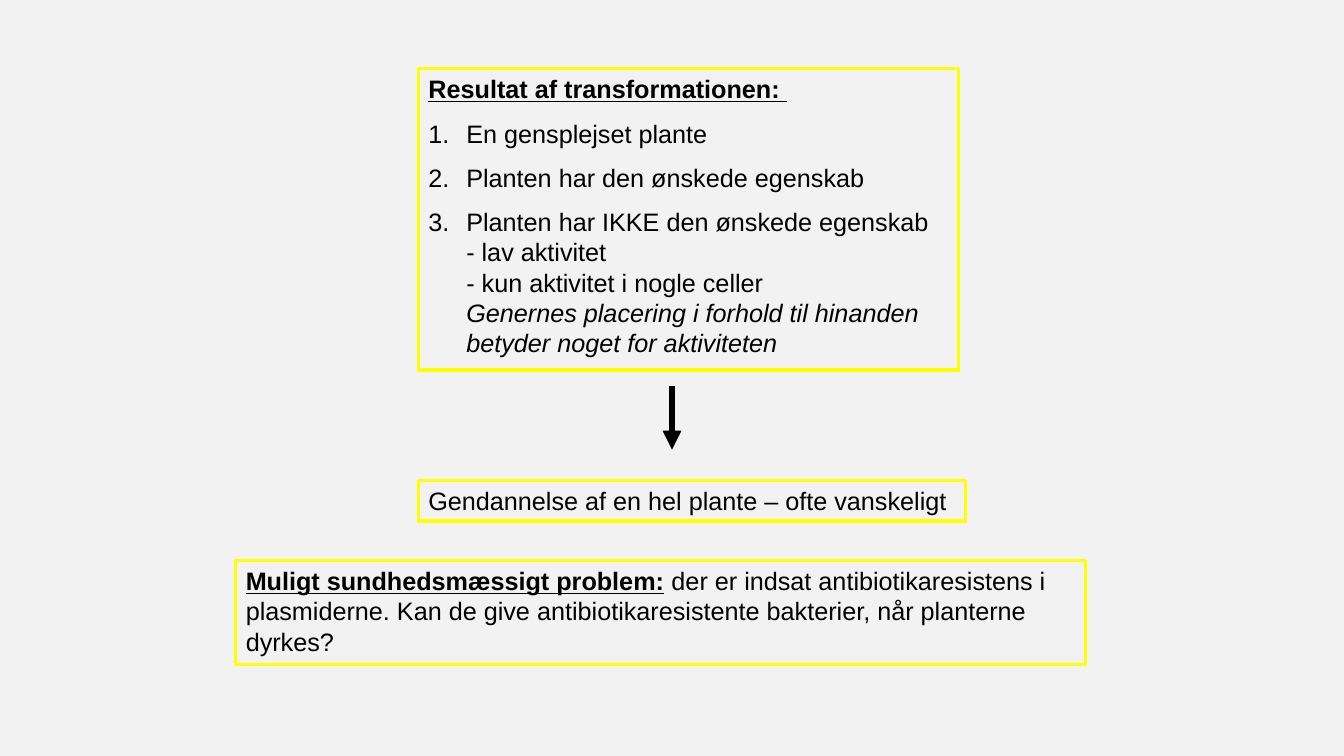
from dataclasses import dataclass

from lxml.etree import SubElement
from pptx import Presentation
from pptx.dml.color import RGBColor
from pptx.enum.shapes import MSO_CONNECTOR as Connector, MSO_SHAPE as Preset
from pptx.enum.text import MSO_ANCHOR as Anchor, MSO_AUTO_SIZE as AutoSize, PP_ALIGN as Align
from pptx.oxml.ns import qn
from pptx.util import Inches, Pt


@dataclass(frozen=True)
class Theme:
    background: RGBColor = RGBColor(0xF2, 0xF2, 0xF2)
    frame: RGBColor = RGBColor(0xFF, 0xFF, 0x00)
    ink: RGBColor = RGBColor(0x00, 0x00, 0x00)
    font: str = "Arial"
    text_size: Pt = Pt(18)
    paragraph_gap: Pt = Pt(10)
    list_indent: Pt = Pt(27)
    frame_width: Pt = Pt(2.25)
    arrow_width: Pt = Pt(4.5)


# Run styles
PLAIN = {}
HEADING = {"bold": True, "underline": True}
UNDERLINED = {"underline": True}
ITALIC = {"italic": True}


class SlideBuilder:
    """Holds the theme and current slide; lengths are percent of the slide's size."""

    def __init__(self, presentation, theme):
        self.presentation = presentation
        self.theme = theme
        self.slide = presentation.slides.add_slide(presentation.slide_layouts[1])
        title = self.slide.shapes.title
        title.element.getparent().remove(title.element)
        fill = self.slide.background.fill
        fill.solid()
        fill.fore_color.rgb = theme.background

    def x(self, share):
        return round(self.presentation.slide_width * share / 100)

    def y(self, share):
        return round(self.presentation.slide_height * share / 100)

    def frame(self, shape, left, top, width, height):
        shape.left, shape.top = self.x(left), self.y(top)
        shape.width, shape.height = self.x(width), self.y(height)
        shape.fill.background()
        shape.line.color.rgb = self.theme.frame
        shape.line.width = self.theme.frame_width
        text_frame = shape.text_frame
        text_frame.word_wrap = True
        text_frame.auto_size = AutoSize.NONE
        text_frame.vertical_anchor = Anchor.TOP
        return text_frame

    def add_text(self, paragraph, runs, first=True):
        paragraph.alignment = Align.LEFT
        paragraph.space_before = Pt(0) if first else self.theme.paragraph_gap
        for text, style in runs:
            for number, line in enumerate(text.split("\n")):
                if number:
                    paragraph.add_line_break()
                if line:
                    self.add_run(paragraph, line, style)

    def add_run(self, paragraph, text, style):
        run = paragraph.add_run()
        run.text = text
        font = run.font
        font.name, font.size = self.theme.font, self.theme.text_size
        font.color.rgb = self.theme.ink
        font.bold = style.get("bold", False)
        font.italic = style.get("italic", False)
        font.underline = style.get("underline", False)

    def text_box(self, place, runs):
        shape = self.slide.shapes.add_shape(Preset.RECTANGLE, 0, 0, 0, 0)
        shape.shadow.inherit = False
        self.add_text(self.frame(shape, *place).paragraphs[0], runs)

    def numbered_list(self, place, heading, items):
        text_frame = self.frame(self.slide.placeholders[1], *place)
        for number, runs in enumerate([heading, *items]):
            paragraph = text_frame.add_paragraph() if number else text_frame.paragraphs[0]
            properties = paragraph._p.get_or_add_pPr()
            properties.set("marL", str(self.theme.list_indent))
            properties.set("indent", str(-self.theme.list_indent))
            if number:
                SubElement(properties, qn("a:buFont"), typeface=self.theme.font)
                SubElement(properties, qn("a:buAutoNum"), type="arabicPeriod")
            else:
                SubElement(properties, qn("a:buNone"))
            self.add_text(paragraph, runs, first=number == 0)

    def down_arrow(self, x, top, bottom):
        arrow = self.slide.shapes.add_connector(
            Connector.STRAIGHT, self.x(x), self.y(top), self.x(x), self.y(bottom))
        arrow.line.color.rgb = self.theme.ink
        arrow.line.width = self.theme.arrow_width
        SubElement(arrow.line._get_or_add_ln(), qn("a:tailEnd"), type="triangle")
        SubElement(arrow._element.spPr, qn("a:effectLst"))


def main():
    presentation = Presentation()
    presentation.slide_width, presentation.slide_height = Inches(13.33), Inches(7.5)
    builder = SlideBuilder(presentation, Theme())

    # Results of the transformation
    builder.numbered_list(
        (31.13, 9.07, 40.21, 39.87),
        [("Resultat af transformationen:", HEADING), (" ", UNDERLINED)],
        [
            [("En gensplejset plante", PLAIN)],
            [("Planten har den ønskede egenskab", PLAIN)],
            [("Planten har IKKE den ønskede egenskab\n- lav aktivitet\n"
              "- kun aktivitet i nogle celler\n", PLAIN),
             ("Genernes placering i forhold til hinanden "
              "betyder noget for aktiviteten", ITALIC)],
        ])

    # Next step
    builder.down_arrow(50, 51.07, 59.47)
    builder.text_box((31.13, 63.6, 40.74, 5.33),
                     [("Gendannelse af en hel plante – ofte vanskeligt", PLAIN)])

    # Health concern
    builder.text_box(
        (17.55, 74.13, 63.24, 13.73),
        [("Muligt sundhedsmæssigt problem:", HEADING),
         (" der er indsat antibiotikaresistens i plasmiderne. Kan de give "
          "antibiotikaresistente bakterier, når planterne dyrkes?", PLAIN)])

    presentation.save("out.pptx")


if __name__ == "__main__":
    main()
